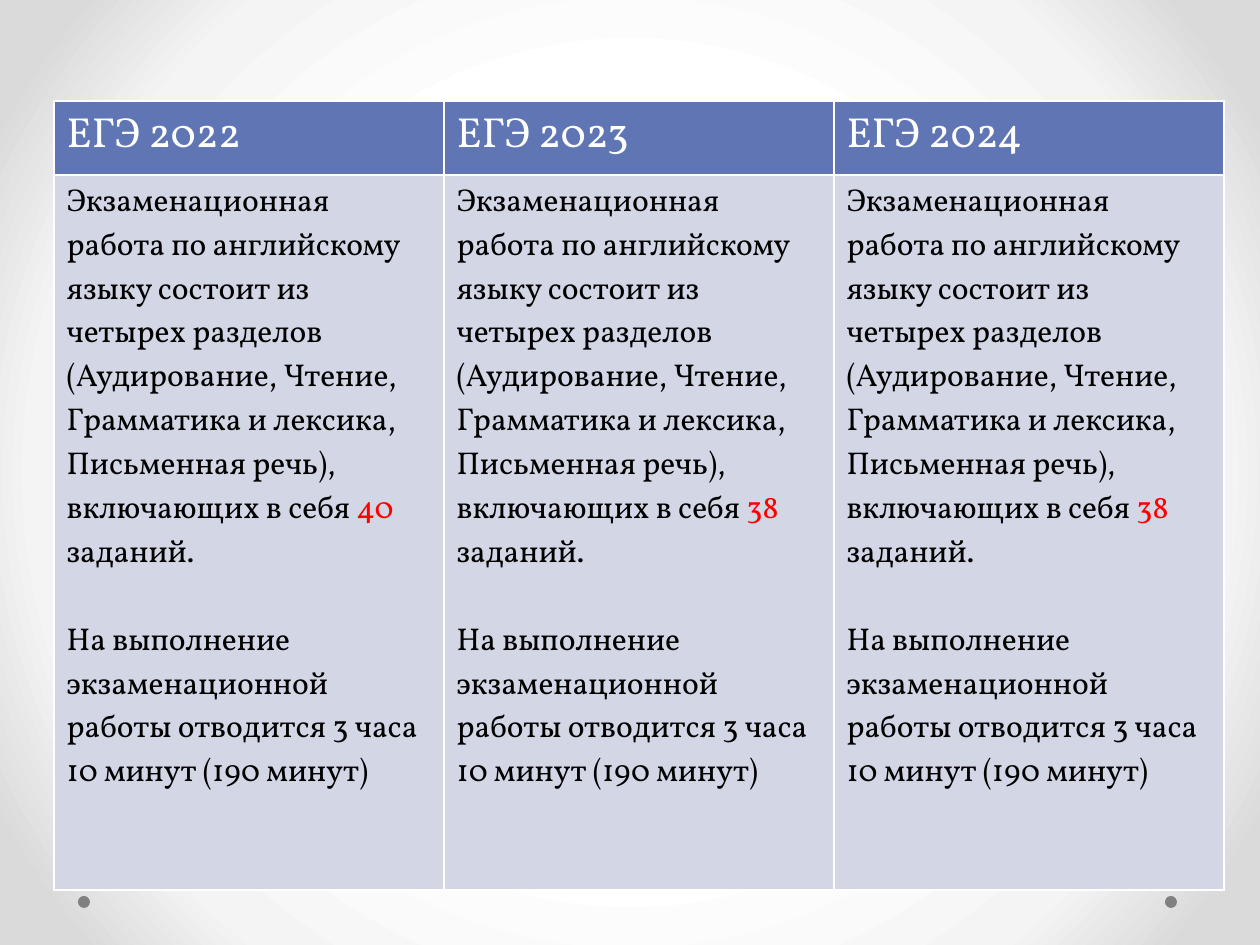
from pptx import Presentation
from pptx import util as u
from pptx.dml.color import RGBColor
from pptx.enum import shapes
from pptx.oxml import parse_xml
from pptx.oxml.ns import nsdecls, qn

COLORS = {
    "white": "FFFFFF",
    "mist": "F4F4F4",
    "edge": "DADADA",
    "dot": "808080",
    "header": "6076B4",
    "body": "D2D6E5",
    "text": "000000",
    "accent": "FF0000",
}
FONT = "Vollkorn"
EXAMS = [("ЕГЭ 2022", "40"), ("ЕГЭ 2023", "38"), ("ЕГЭ 2024", "38")]
STRUCTURE = (
    "Экзаменационная работа по английскому языку состоит из четырех разделов "
    "(Аудирование, Чтение, Грамматика и лексика, Письменная речь), "
    "включающих в себя "
)
DURATION = "На выполнение экзаменационной работы отводится 3 часа 10 минут (190 минут)"


def px(n):
    return u.Emu(round(n * 914400 / 126))


def rgb(name):
    return RGBColor.from_string(COLORS[name])


class Deck:
    """Holds the style and the current slide, and draws each kind of element."""

    def __init__(self, width, height):
        self.prs = Presentation()
        self.prs.slide_width, self.prs.slide_height = px(width), px(height)
        self.s = self.prs.slides.add_slide(self.prs.slide_layouts[6])

    def background(self, stops):
        self.s.background.fill.solid()
        solid = self.s.element.find(".//" + qn("a:solidFill"))
        marks = "".join(
            f'<a:gs pos="{pos * 1000}"><a:srgbClr val="{COLORS[color]}"/></a:gs>'
            for pos, color in stops
        )
        solid.getparent().replace(solid, parse_xml(
            f'<a:gradFill {nsdecls("a")} rotWithShape="1"><a:gsLst>{marks}</a:gsLst>'
            '<a:path path="circle"><a:fillToRect l="50000" t="50000" r="50000" b="50000"/>'
            "</a:path></a:gradFill>"
        ))

    def dot(self, x, y, size):
        sp = self.s.shapes.add_shape(
            shapes.MSO_SHAPE.OVAL, px(x), px(y), px(size), px(size))
        sp.shadow.inherit = False
        sp.fill.solid()
        sp.fill.fore_color.rgb = rgb("dot")
        sp.line.fill.background()

    def table(self, x, y, col_width, heights, cols):
        table = self.s.shapes.add_table(
            len(heights), cols, px(x), px(y), px(col_width * cols), px(sum(heights))).table
        for col in table.columns:
            col.width = px(col_width)
        for row, height in zip(table.rows, heights):
            row.height = px(height)
        return table

    def cell(self, cell, paragraphs, size, color, fill, gap=0):
        cell.fill.solid()
        cell.fill.fore_color.rgb = rgb(fill)
        for i, side in enumerate(("lnL", "lnR", "lnT", "lnB")):
            cell._tc.tcPr.insert(i, parse_xml(
                f'<a:{side} {nsdecls("a")} w="12700"><a:solidFill>'
                f'<a:srgbClr val="{COLORS["white"]}"/></a:solidFill></a:{side}>'
            ))
        tf = cell.text_frame
        for i, runs in enumerate(paragraphs):
            p = tf.add_paragraph() if i else tf.paragraphs[0]
            p.font.name, p.font.size, p.font.bold = FONT, u.Pt(size), False
            p.font.color.rgb = rgb(color)
            if i:
                p.space_before = u.Pt(gap)
            for value, run_color in runs:
                r = p.add_run()
                r.text = value
                if run_color != color:
                    r.font.color.rgb = rgb(run_color)


def main():
    deck = Deck(1260, 945)
    deck.background([(50, "white"), (76, "mist"), (92, "edge")])
    for x in (1165, 78):
        deck.dot(x, 896, 12)
    table = deck.table(54, 101, 390, (74, 715), len(EXAMS))
    for col, (title, tasks) in enumerate(EXAMS):
        deck.cell(table.cell(0, col), [[(title, "white")]], 24, "white", "header")
        structure = [(STRUCTURE, "text"), (tasks, "accent"), (" заданий.", "text")]
        deck.cell(table.cell(1, col), [structure, [(DURATION, "text")]],
                  18, "text", "body", gap=25)
    deck.prs.save("out.pptx")


if __name__ == "__main__":
    main()
